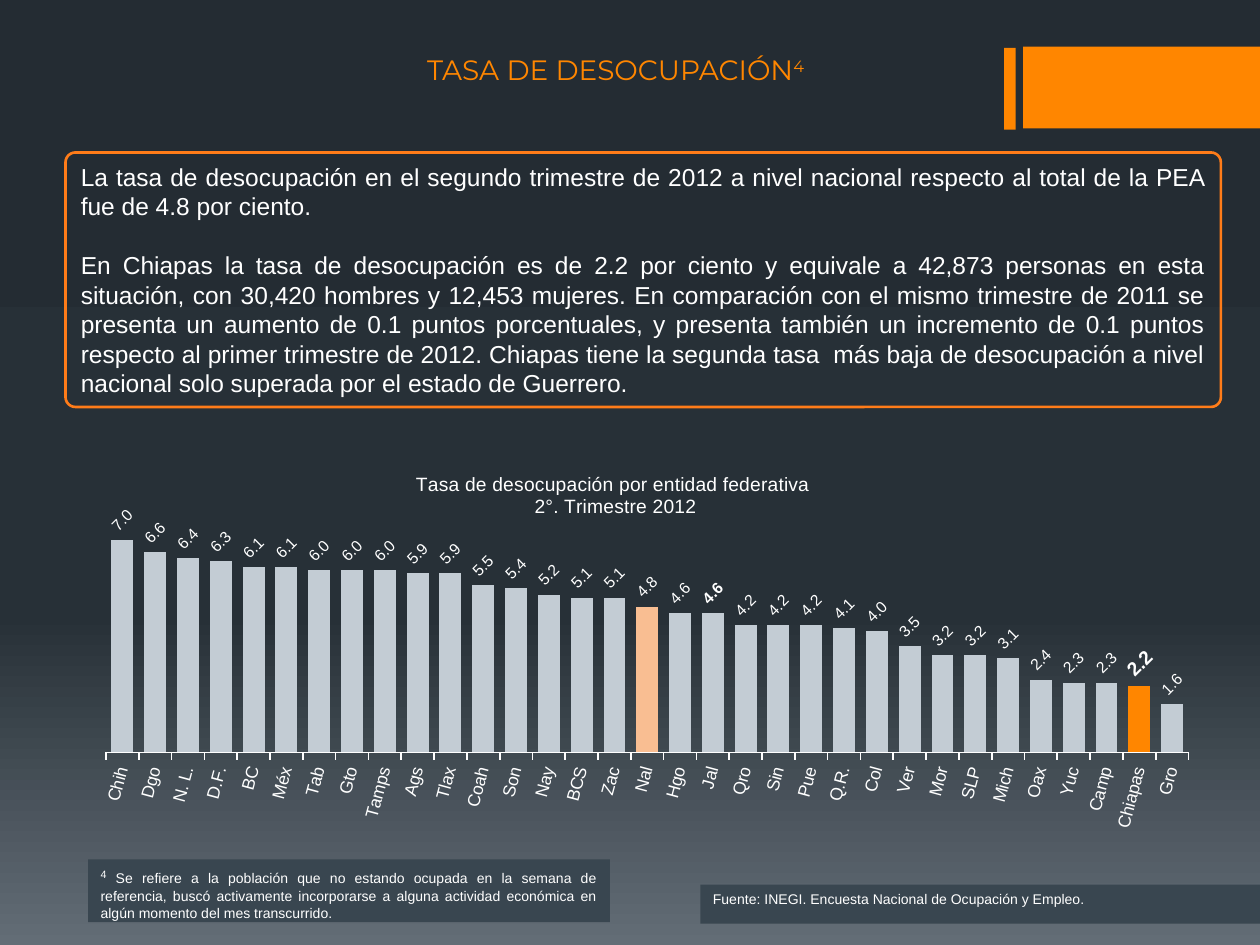
from lxml import etree
from pptx import Presentation
from pptx.chart.data import CategoryChartData
from pptx.dml.color import RGBColor
from pptx.enum.chart import XL_CHART_TYPE, XL_LABEL_POSITION, XL_TICK_MARK
from pptx.enum.shapes import MSO_SHAPE
from pptx.enum.text import MSO_ANCHOR, PP_ALIGN
from pptx.oxml import parse_xml
from pptx.oxml.ns import nsdecls, qn
from pptx.util import Inches, Pt

RECT, ROUND = MSO_SHAPE.RECTANGLE, MSO_SHAPE.ROUNDED_RECTANGLE
TOP, MIDDLE = MSO_ANCHOR.TOP, MSO_ANCHOR.MIDDLE
JUSTIFY, CENTER = PP_ALIGN.JUSTIFY, PP_ALIGN.CENTER
COLUMN = XL_CHART_TYPE.COLUMN_CLUSTERED
OUT_END = XL_LABEL_POSITION.OUTSIDE_END
TICK_OUT = XL_TICK_MARK.OUTSIDE

WHITE = RGBColor(0xFF, 0xFF, 0xFF)
ORANGE = RGBColor(0xFF, 0x86, 0x00)
BORDER = RGBColor(0xFF, 0x7C, 0x19)
SLATE = RGBColor(0x39, 0x46, 0x50)
GREY = RGBColor(0xC3, 0xCC, 0xD4)
PEACH = RGBColor(0xF9, 0xBE, 0x92)
DARK = RGBColor(0x24, 0x2C, 0x33)
DUSK = RGBColor(0x27, 0x30, 0x37)
MIST = RGBColor(0x63, 0x6D, 0x76)


def add_box(kind, at, fill=None, anchor=TOP):
    box = slide.shapes.add_shape(kind, *map(Inches, at))
    box.shadow.inherit = False
    if fill is None:
        box.fill.background()
    else:
        box.fill.solid()
        box.fill.fore_color.rgb = fill
    box.line.fill.background()
    box.text_frame.word_wrap = True
    box.text_frame.vertical_anchor = anchor
    return box


def add_run(para, text, size, color=WHITE, face="Arial", raised=False):
    run = para.add_run()
    run.text = text
    run.font.size = Pt(size)
    run.font.name = face
    run.font.color.rgb = color
    if raised:
        run.font._element.set("baseline", "30000")


prs = Presentation()
prs.slide_width, prs.slide_height = Inches(10), Inches(7.5)
slide = prs.slides.add_slide(prs.slide_layouts[6])

# Background: three-stop vertical gradient
fill = slide.background.fill
fill.gradient()
grad = fill._xPr.find(qn("a:gradFill"))
stops = "".join(
    f'<a:gs pos="{pos * 1000}"><a:srgbClr val="{color}"/></a:gs>'
    for pos, color in ((0, DARK), (65, DUSK), (100, MIST)))
grad.getparent().replace(grad, parse_xml(
    f'<a:gradFill {nsdecls("a")} rotWithShape="1"><a:gsLst>{stops}</a:gsLst>'
    '<a:lin ang="5400000" scaled="0"/></a:gradFill>'))

# Corner bars
add_box(RECT, (7.97, 0.38, 0.09, 0.65), ORANGE)
add_box(RECT, (8.12, 0.37, 1.88, 0.65), ORANGE)

# Main text
panel = add_box(ROUND, (0.52, 1.21, 9.17, 2.02), anchor=MIDDLE)
panel.adjustments[0] = 0.039
panel.line.color.rgb = BORDER
panel.line.width = Pt(1.5)
frame = panel.text_frame
para = frame.paragraphs[0]
para.alignment = JUSTIFY
add_run(para, "La tasa de desocupación en el segundo trimestre de 2012 a nivel "
        "nacional respecto al total de la PEA fue de 4.8 por ciento.", 14)
para = frame.add_paragraph()
para.alignment = JUSTIFY
para.space_before = Pt(17)
add_run(para, "En Chiapas la tasa de desocupación es de 2.2 por ciento y equivale "
        "a 42,873 personas en esta situación, con 30,420 hombres y 12,453 mujeres. "
        "En comparación con el mismo trimestre de 2011 se presenta un aumento de "
        "0.1 puntos porcentuales, y presenta también un incremento de 0.1 puntos "
        "respecto al primer trimestre de 2012. Chiapas tiene la segunda tasa  más "
        "baja de desocupación a nivel nacional solo superada por el estado de "
        "Guerrero.", 14)

# Footnote and source
para = add_box(RECT, (0.7, 6.82, 4.14, 0.5), SLATE).text_frame.paragraphs[0]
para.alignment = JUSTIFY
add_run(para, "4", 10.5, raised=True)
add_run(para, " Se refiere a la población que no estando ocupada en la semana de "
        "referencia, buscó activamente incorporarse a alguna actividad económica "
        "en algún momento del mes transcurrido.", 8)
para = add_box(RECT, (5.56, 7.02, 4.44, 0.31), SLATE).text_frame.paragraphs[0]
para.alignment = JUSTIFY
add_run(para, "Fuente: INEGI. Encuesta Nacional de Ocupación y Empleo.", 8)

# Slide title
head = slide.shapes.add_textbox(*map(Inches, (1.84, 0.37, 6.09, 0.37)))
head.text_frame.word_wrap = True
para = head.text_frame.paragraphs[0]
para.alignment = CENTER
add_run(para, "TASA DE DESOCUPACIÓN", 16, ORANGE, "Montserrat")
add_run(para, "4", 16, ORANGE, "Montserrat", raised=True)

# Chart of unemployment rate by state
rates = (
    ("Chih", 7.0), ("Dgo", 6.6), ("N. L.", 6.4), ("D.F.", 6.3), ("BC", 6.1),
    ("Méx", 6.1), ("Tab", 6.0), ("Gto", 6.0), ("Tamps", 6.0), ("Ags", 5.9),
    ("Tlax", 5.9), ("Coah", 5.5), ("Son", 5.4), ("Nay", 5.2), ("BCS", 5.1),
    ("Zac", 5.1), ("Nal", 4.8), ("Hgo", 4.6), ("Jal", 4.6), ("Qro", 4.2),
    ("Sin", 4.2), ("Pue", 4.2), ("Q.R.", 4.1), ("Col", 4.0), ("Ver", 3.5),
    ("Mor", 3.2), ("SLP", 3.2), ("Mich", 3.1), ("Oax", 2.4), ("Yuc", 2.3),
    ("Camp", 2.3), ("Chiapas", 2.2), ("Gro", 1.6))
states = [state for state, _ in rates]
data = CategoryChartData(number_format="0.0")
data.categories = states
data.add_series("Series 1", [rate for _, rate in rates])
chart = slide.shapes.add_chart(
    COLUMN, *map(Inches, (0.52, 3.37, 9.17, 3.32)), data).chart
chart.has_legend = False
chart.font.size = Pt(10)
chart.font.name = "Arial"
chart.font.color.rgb = WHITE

# Chart title
chart.has_title = True
frame = chart.chart_title.text_frame
lines = ("Tasa de desocupación por entidad federativa ", "2°. Trimestre 2012")
for num, line in enumerate(lines):
    para = frame.add_paragraph() if num else frame.paragraphs[0]
    para.alignment = CENTER
    para.font.bold = False
    add_run(para, line, 11)
    para.runs[0].font.bold = False

# Fixed places for title and plot area
places = (
    (chart.chart_title._element, {"xMode": "edge", "yMode": "edge", "x": 0.3, "y": 0.1}),
    (chart._chartSpace.chart.plotArea,
     {"layoutTarget": "inner", "xMode": "edge", "yMode": "edge",
      "x": 0.035, "y": 0.203, "w": 0.937, "h": 0.581}))
for part, place in places:
    layout = part.find(qn("c:layout"))
    if layout is None:
        layout = etree.Element(qn("c:layout"))
        text = part.find(qn("c:tx"))
        part.insert(0 if text is None else 1, layout)
    manual = etree.SubElement(layout, qn("c:manualLayout"))
    for key, val in place.items():
        etree.SubElement(manual, qn(f"c:{key}")).set("val", str(val))

# Axes
axis = chart.value_axis
axis.minimum_scale, axis.maximum_scale = 0, 8
axis.has_major_gridlines = False
axis.visible = False
axis = chart.category_axis
axis.major_tick_mark = TICK_OUT
axis.format.line.color.rgb = WHITE
axis.format.line.width = Pt(1)
axis.tick_labels.font.size = Pt(10)
axis._element.find(qn("c:txPr")).find(qn("a:bodyPr")).set("rot", "-4500000")

# Columns
plot = chart.plots[0]
plot.gap_width = 50
plot.vary_by_categories = False
series = plot.series[0]
series.format.fill.solid()
series.format.fill.fore_color.rgb = GREY
for state, color in (("Nal", PEACH), ("Chiapas", ORANGE)):
    mark = series.points[states.index(state)].format.fill
    mark.solid()
    mark.fore_color.rgb = color

# Value labels, two of them bold
labels = series.data_labels
labels.show_value = True
labels.number_format = "0.0"
labels.number_format_is_linked = False
labels.position = OUT_END
labels.font.size = Pt(9)
labels.font.color.rgb = WHITE
for state, size in (("Jal", 9), ("Chiapas", 11)):
    label = series.points[states.index(state)].data_label
    label.font.size = Pt(size)
    label.font.bold = True
    label.font.color.rgb = WHITE
    label.position = OUT_END
for item in labels._element.iter(qn("c:txPr")):
    item.find(qn("a:bodyPr")).set("rot", "-2700000")
for item in labels._element.findall(qn("c:dLbl")):
    item.insert(1, parse_xml(
        f'<c:numFmt {nsdecls("c")} formatCode="0.0" sourceLinked="0"/>'))

prs.save("out.pptx")
